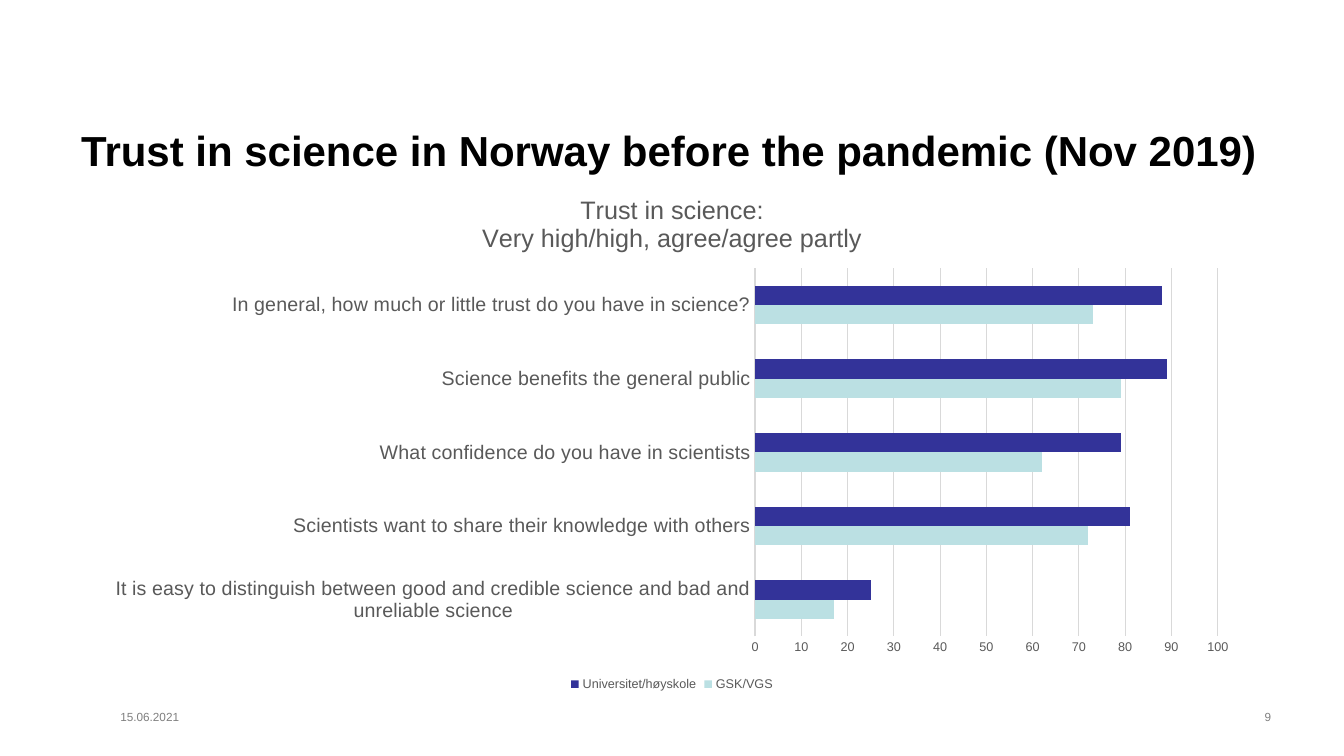
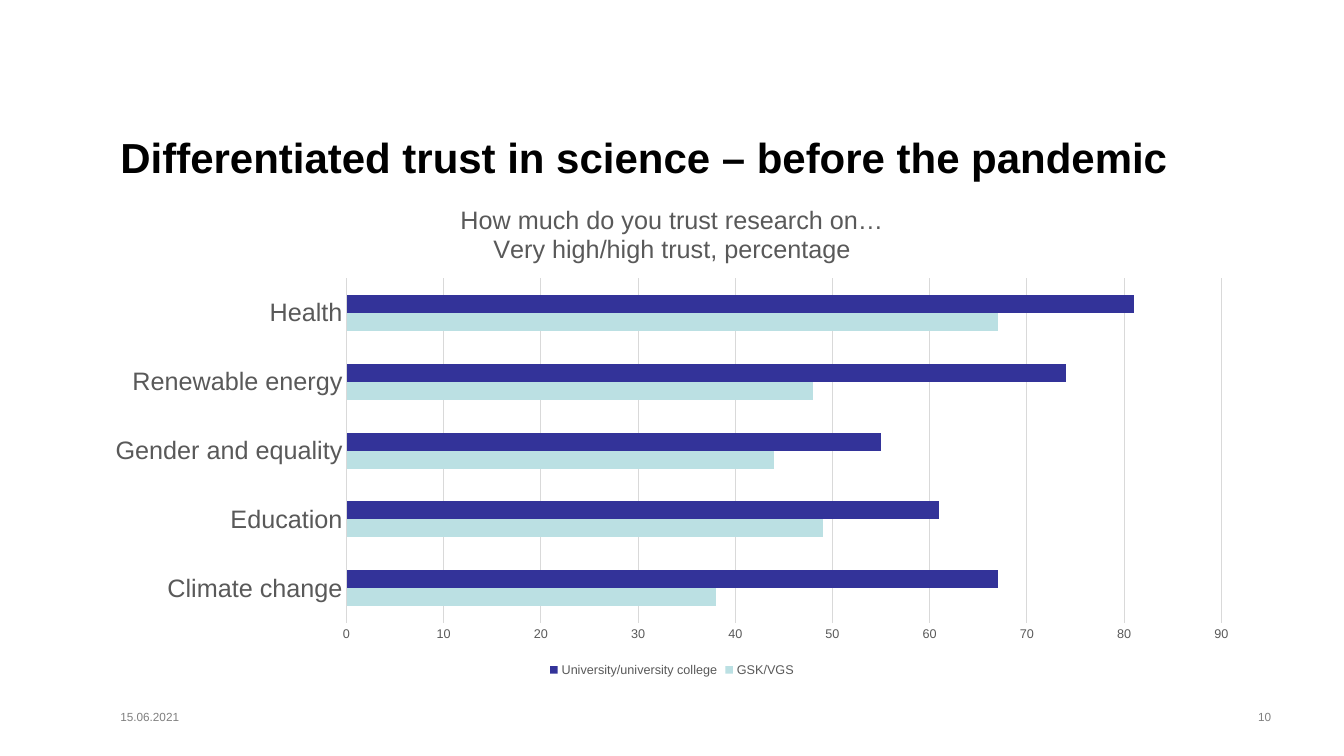
"""Build two slides on trust in science, each with a clustered bar chart."""
from pptx import Presentation
from pptx.chart.data import CategoryChartData
from pptx.dml.color import RGBColor
from pptx.enum.chart import XL_CHART_TYPE as ChartType
from pptx.enum.chart import XL_LEGEND_POSITION as LegendPosition
from pptx.enum.chart import XL_TICK_MARK as TickMark
from pptx.enum.text import MSO_ANCHOR as Anchor
from pptx.enum.text import MSO_AUTO_SIZE as AutoSize
from pptx.enum.text import PP_ALIGN as Align
from pptx.util import Pt

FONT = "Arial"
BLACK = RGBColor(0x00, 0x00, 0x00)
FOOTER_GREY = RGBColor(0x80, 0x80, 0x80)
CHART_GREY = RGBColor(0x59, 0x59, 0x59)
GRID_GREY = RGBColor(0xD9, 0xD9, 0xD9)
PALE_TEAL = RGBColor(0xBB, 0xE0, 0xE3)
INDIGO = RGBColor(0x33, 0x33, 0x99)
SERIES_COLORS = (PALE_TEAL, INDIGO)
DATE = "15.06.2021"

SLIDES = (
    {
        "title": "Trust in science in Norway before the pandemic (Nov 2019)",
        "title_at": (52, 62, 862.5, 90),
        "number": "9",
        "chart_at": (66, 125.3, 828, 371.5),
        "heading": ("Trust in science:", "Very high/high, agree/agree partly"),
        "label_size": 14,
        "maximum": 100,
        "categories": (
            "It is easy to distinguish between good and credible science "
            "and bad and unreliable science",
            "Scientists want to share their knowledge with others",
            "What confidence do you have in scientists",
            "Science benefits the general public",
            "In general, how much or little trust do you have in science?",
        ),
        "series": {
            "GSK/VGS": (17, 72, 62, 79, 73),
            "Universitet/høyskole": (25, 81, 79, 89, 88),
        },
    },
    {
        "title": "Differentiated trust in science – before the pandemic",
        "title_at": (80, 67, 832, 90),
        "number": "10",
        "chart_at": (66, 133.2, 828, 353.5),
        "heading": ("How much do you trust research on…",
                    "Very high/high trust, percentage"),
        "label_size": 18,
        "maximum": 90,
        "categories": ("Climate change", "Education", "Gender and equality",
                       "Renewable energy", "Health"),
        "series": {
            "GSK/VGS": (38, 49, 44, 48, 67),
            "University/university college": (67, 61, 55, 74, 81),
        },
    },
)


def style_font(font, size, color, bold=False):
    """Set the typeface, size, colour and weight of a font."""
    font.name = FONT
    font.size = Pt(size)
    font.bold = bold
    font.color.rgb = color


def fill_box(box, text, size, color, bold=False, align=Align.LEFT, anchor=Anchor.TOP):
    """Write one styled run into a box with the shared insets."""
    frame = box.text_frame
    frame.word_wrap = True
    frame.auto_size = AutoSize.NONE
    frame.vertical_anchor = anchor
    frame.margin_left = frame.margin_right = Pt(6)
    frame.margin_top = frame.margin_bottom = Pt(3)
    para = frame.paragraphs[0]
    para.alignment = align
    span = para.add_run()
    span.text = text
    style_font(span.font, size, color, bold)


def add_title(page, text, place):
    """Move and fill the title placeholder."""
    title = page.shapes.title
    title.left, title.top, title.width, title.height = map(Pt, place)
    fill_box(title, text, 30, BLACK, bold=True, anchor=Anchor.MIDDLE)


def add_footer(page, number):
    """Add the date on the left and the slide number on the right."""
    for text, left, width, align in ((DATE, 80, 200, Align.LEFT),
                                     (number, 842, 72, Align.RIGHT)):
        box = page.shapes.add_textbox(Pt(left), Pt(504), Pt(width), Pt(36))
        fill_box(box, text, 8.4, FOOTER_GREY, align=align)


def style_line(line):
    """Draw a thin grey chart line."""
    line.color.rgb = GRID_GREY
    line.width = Pt(0.75)


def style_axes(chart, label_size, maximum):
    """Format the category axis, the value axis and its gridlines."""
    labels, values = chart.category_axis, chart.value_axis
    for axis, size in ((labels, label_size), (values, 9)):
        axis.major_tick_mark = axis.minor_tick_mark = TickMark.NONE
        style_font(axis.tick_labels.font, size, CHART_GREY)
    style_line(labels.format.line)
    values.format.line.fill.background()
    values.minimum_scale, values.maximum_scale = 0, maximum
    values.major_unit = 10
    values.has_major_gridlines = True
    style_line(values.major_gridlines.format.line)


def add_heading(chart, lines):
    """Give the chart a heading with one paragraph per line."""
    chart.has_title = True
    chart.chart_title.include_in_layout = False
    frame = chart.chart_title.text_frame
    for index, text in enumerate(lines):
        para = frame.add_paragraph() if index else frame.paragraphs[0]
        style_font(para.font, 18, CHART_GREY)
        span = para.add_run()
        span.text = text
        style_font(span.font, 18, CHART_GREY)


def add_bar_chart(page, content):
    """Add the clustered bar chart with its heading and legend."""
    data = CategoryChartData()
    data.categories = content["categories"]
    for name, values in content["series"].items():
        data.add_series(name, values)
    place = map(Pt, content["chart_at"])
    chart = page.shapes.add_chart(ChartType.BAR_CLUSTERED, *place, data).chart
    style_font(chart.font, 10, BLACK)
    add_heading(chart, content["heading"])
    style_axes(chart, content["label_size"], content["maximum"])
    chart.has_legend = True
    chart.legend.position = LegendPosition.BOTTOM
    chart.legend.include_in_layout = False
    style_font(chart.legend.font, 9, CHART_GREY)
    plot = chart.plots[0]
    plot.gap_width = 182
    plot.vary_by_categories = False
    for series, color in zip(plot.series, SERIES_COLORS):
        series.format.fill.solid()
        series.format.fill.fore_color.rgb = color


def main():
    """Build and save the deck."""
    deck = Presentation()
    deck.slide_width, deck.slide_height = Pt(960), Pt(540)
    title_only = deck.slide_layouts[5]
    for content in SLIDES:
        page = deck.slides.add_slide(title_only)
        add_title(page, content["title"], content["title_at"])
        add_footer(page, content["number"])
        add_bar_chart(page, content)
    deck.save("out.pptx")


if __name__ == "__main__":
    main()
